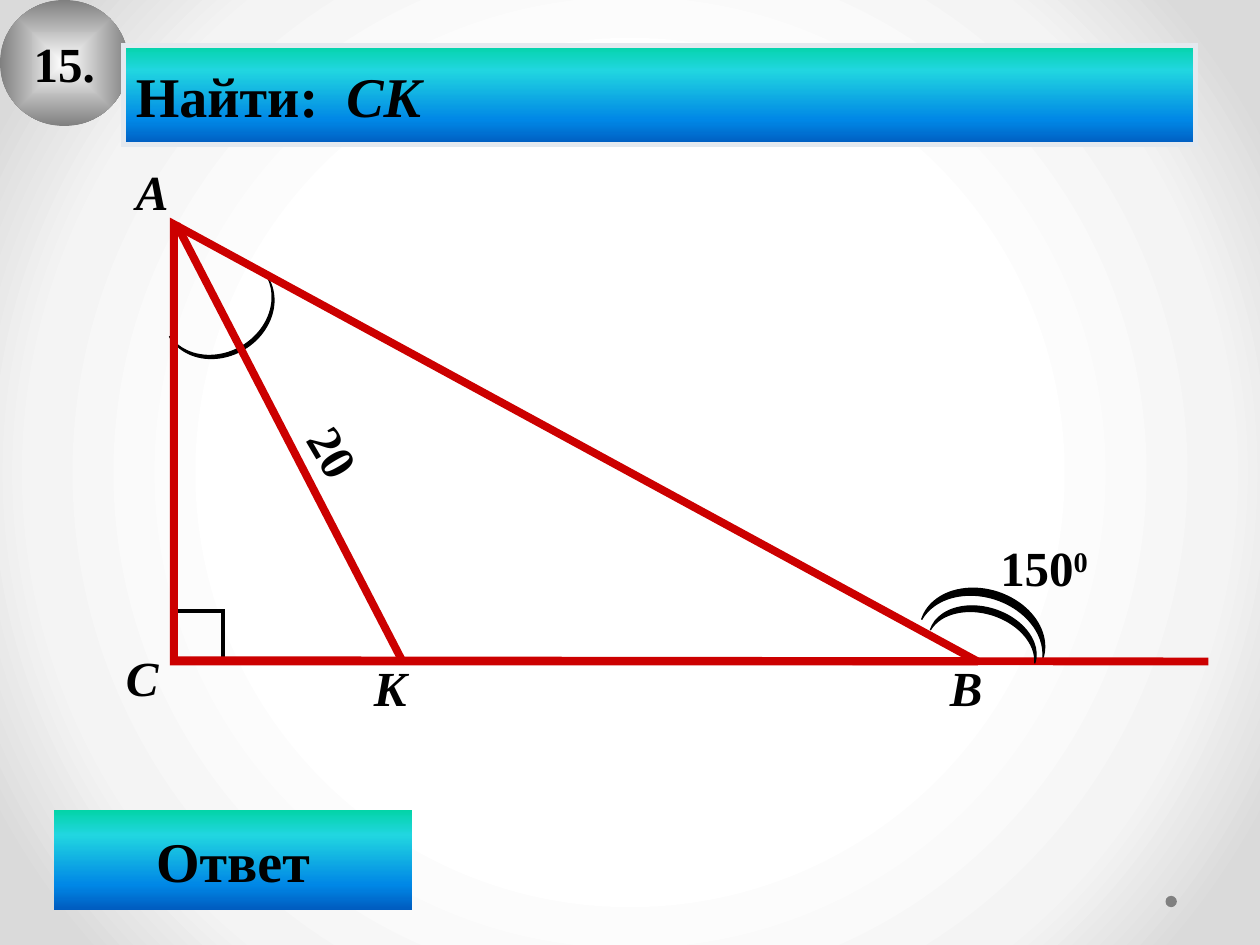
from dataclasses import dataclass

from lxml import etree
from pptx import Presentation
from pptx.dml.color import RGBColor as Rgb
from pptx.enum.shapes import MSO_CONNECTOR as Link, MSO_SHAPE as Shape
from pptx.enum.text import MSO_ANCHOR as Anchor, MSO_AUTO_SIZE as Fit, PP_ALIGN as Align
from pptx.oxml import parse_xml
from pptx.oxml.ns import nsdecls, qn
from pptx.util import Inches, Pt


@dataclass(frozen=True)
class Theme:
    font: str = "Times New Roman"
    ink: str = "000000"
    red: str = "CC0000"
    frame: str = "E4E9EF"
    grey: str = "808080"
    backdrop: tuple = ((50, "FFFFFF"), (76, "F4F4F4"), (92, "DADADA"))
    badge: tuple = ((0, "FFFFFF"), (100, "808080"))
    ocean: tuple = ((0, "03D4A8"), (25, "21D6E0"), (75, "0087E6"), (100, "005CBF"))
    heading: int = 32
    label: int = 28
    side: float = 4.5
    mark: float = 2.5
    arc: float = 0.75
    border: float = 3


class Painter:
    def __init__(self, slide, theme):
        self.slide = slide
        self.theme = theme

    def gradient(self, holder, stops, shade):
        colours = "".join(
            f'<a:gs pos="{place * 1000}"><a:srgbClr val="{colour}"/></a:gs>'
            for place, colour in stops
        )
        if shade == "linear":
            course = '<a:lin ang="5400000" scaled="0"/>'
        else:
            course = (f'<a:path path="{shade}"><a:fillToRect l="50000" t="50000" '
                      'r="50000" b="50000"/></a:path>')
        fill = parse_xml(f'<a:gradFill {nsdecls("a")} rotWithShape="1">'
                         f'<a:gsLst>{colours}</a:gsLst>{course}</a:gradFill>')
        holder.replace(holder.find(qn("a:noFill")), fill)

    def background(self, stops):
        self.slide.background.fill.background()
        holder = self.slide.element.find(".//" + qn("p:bgPr"))
        self.gradient(holder, stops, "circle")

    def outline(self, line, colour, width):
        line.color.rgb = Rgb.from_string(colour)
        line.width = Pt(width)
        miter = etree.SubElement(line._get_or_add_ln(), qn("a:miter"))
        miter.set("lim", "800000")

    def shape(self, kind, place, fill=None, shade="linear", line=None, turn=0, bend=None):
        box = self.slide.shapes.add_shape(kind, *map(Inches, place))
        box.shadow.inherit = False
        box.rotation = turn
        if bend is not None:
            box.adjustments[0] = bend
        if isinstance(fill, str):
            box.fill.solid()
            box.fill.fore_color.rgb = Rgb.from_string(fill)
        else:
            box.fill.background()
            if fill:
                self.gradient(box.element.spPr, fill, shade)
        if line:
            self.outline(box.line, *line)
        else:
            box.line.fill.background()
        return box

    def line(self, start, end):
        link = self.slide.shapes.add_connector(
            Link.STRAIGHT, *map(Inches, (*start, *end)))
        self.outline(link.line, self.theme.red, self.theme.side)
        etree.SubElement(link.element.spPr, qn("a:effectLst"))

    def set_text(self, box, text, size, align=Align.LEFT, italic=False):
        box.text_frame.text = text
        para = box.text_frame.paragraphs[0]
        para.alignment = align
        self.style(para.runs[0], size, italic)
        return para

    def extend(self, para, text, size, italic=False):
        span = para.add_run()
        span.text = text
        self.style(span, size, italic)
        return span

    def style(self, span, size, italic):
        span.font.name = self.theme.font
        span.font.size = Pt(size)
        span.font.bold = True
        span.font.italic = italic
        span.font.color.rgb = Rgb.from_string(self.theme.ink)

    def label(self, text, place, italic=True, turn=0):
        box = self.slide.shapes.add_textbox(*map(Inches, place))
        box.rotation = turn
        box.text_frame.word_wrap = False
        box.text_frame.auto_size = Fit.SHAPE_TO_FIT_TEXT
        return self.set_text(box, text, self.theme.label, italic=italic)

    def caption(self, box, text, size, align=Align.CENTER, wrap=False):
        box.text_frame.word_wrap = wrap
        box.text_frame.vertical_anchor = Anchor.MIDDLE
        return self.set_text(box, text, size, align)

    def arc(self, place, turn, bend):
        ink = self.theme.ink
        self.shape(Shape.MOON, place, ink, line=(ink, self.theme.arc), turn=turn, bend=bend)


def main():
    deck = Presentation()
    deck.slide_width, deck.slide_height = Inches(10), Inches(7.5)
    theme = Theme()
    page = Painter(deck.slides.add_slide(deck.slide_layouts[6]), theme)
    page.background(theme.backdrop)
    page.shape(Shape.OVAL, (9.25, 7.11, 0.09, 0.09), theme.grey)

    badge = page.shape(Shape.OVAL, (0, 0, 1.02, 1), theme.badge, "shape")
    page.caption(badge, "15.", theme.label)
    answer = page.shape(Shape.ACTION_BUTTON_CUSTOM, (0.43, 6.43, 2.84, 0.79), theme.ocean)
    page.caption(answer, "Ответ", theme.heading)

    page.label("20", (2.36, 3.3, 0.59, 0.57), italic=False, turn=59.5)
    vertices = (("А", 0.98, 1.23), ("В", 7.44, 5.17), ("С", 0.9, 5.09), ("K", 2.87, 5.17))
    for name, left, top in vertices:
        page.label(name, (left, top, 0.46, 0.57))

    left, top, width, height = 1.38, 1.78, 6.38, 3.47
    corner = 0.39
    page.arc((1.64, 2.15, 0.39, 0.91), 239.3, 0.072)
    page.shape(Shape.RECTANGLE, (left, 4.85, corner, corner), line=(theme.ink, theme.mark))
    page.shape(Shape.RIGHT_TRIANGLE, (left, top, width, height),
               line=(theme.red, theme.side))

    title = page.shape(Shape.RECTANGLE, (0.98, 0.36, 8.51, 0.79), theme.ocean,
                       line=(theme.frame, theme.border))
    task = page.caption(title, "Найти:", theme.heading, Align.LEFT, wrap=True)
    gap = page.extend(task, " ", theme.heading)
    gap.font._element.set("spc", "800")
    page.extend(task, "CK", theme.heading, italic=True)

    page.line((1.4, top), (3.19, 5.24))
    page.arc((7.66, 4.38, 0.39, 1.01), 107.7, 0.149)
    angle = page.label("150", (7.84, 4.22, 0.92, 0.57), italic=False)
    degree = page.extend(angle, "0", theme.label)
    degree.font._element.set("baseline", "30000")
    page.line((left, 5.24), (9.59, 5.25))
    page.arc((7.69, 4.55, 0.31, 0.87), 107.7, 0.149)

    deck.save("out.pptx")


if __name__ == "__main__":
    main()
